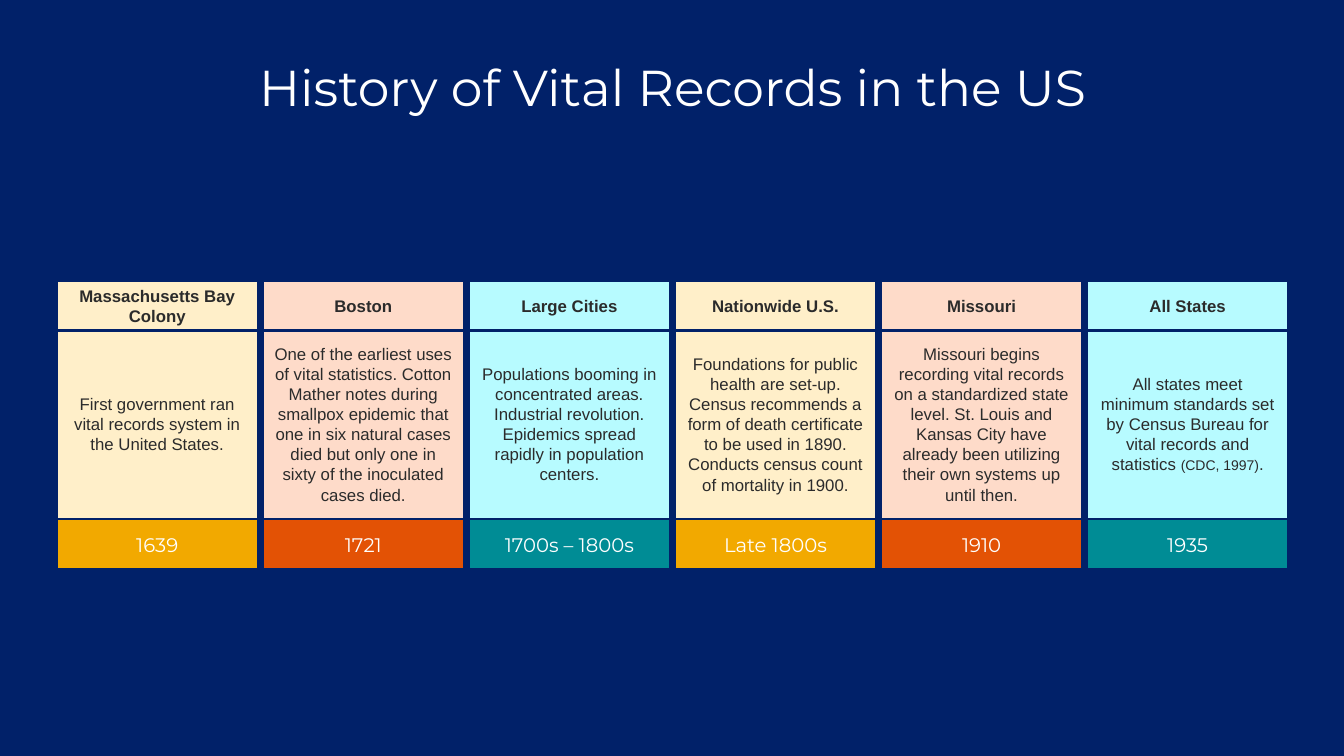
from pptx import Presentation
from pptx.dml.color import RGBColor
from pptx.enum.shapes import MSO_SHAPE
from pptx.enum.text import MSO_ANCHOR, PP_ALIGN
from pptx.util import Inches, Pt

NAVY, WHITE, CHARCOAL = "012169", "FFFFFF", "2B2B2B"
PALE = ["FFEFC9", "FEDBC9", "B7FBFF"]
STRONG = ["F2A900", "E35205", "008C95"]

FIRST_LEFT, LAST_LEFT, COLUMN_WIDTH = 0.56, 10.78, 2
ROWS = {"heading": (2.78, 0.5), "story": (3.26, 1.89), "year": (5.15, 0.5)}

FORMATS = {
    "title": {"name": "Montserrat", "size": Pt(36)},
    "heading": {"name": "Arial", "size": Pt(12), "bold": True},
    "story": {"name": "Arial", "size": Pt(12)},
    "citation": {"name": "Arial", "size": Pt(10)},
    "year": {"name": "Montserrat", "size": Pt(14)},
}

MILESTONES = [
    ("Massachusetts Bay Colony", "1639",
     [("First government ran vital records system in the United States.", "story")]),
    ("Boston", "1721",
     [("One of the earliest uses of vital statistics. Cotton Mather notes during "
       "smallpox epidemic that one in six natural cases died but only one in sixty "
       "of the inoculated cases died.", "story")]),
    ("Large Cities", "1700s – 1800s",
     [("Populations booming in concentrated areas. Industrial revolution. Epidemics "
       "spread rapidly in population centers.", "story")]),
    ("Nationwide U.S.", "Late 1800s",
     [("Foundations for public health are set-up. Census recommends a form of death "
       "certificate to be used in 1890. Conducts census count of mortality in 1900.",
       "story")]),
    ("Missouri", "1910",
     [("Missouri begins recording vital records on a standardized state level. "
       "St. Louis and Kansas City have already been utilizing their own systems up "
       "until then.", "story")]),
    ("All States", "1935",
     [("All states meet minimum standards set by Census Bureau for vital records and "
       "statistics ", "story"), ("(CDC, 1997)", "citation"), (".", "story")]),
]


def color(hex_value):
    return RGBColor.from_string(hex_value)


def write(frame, pieces, ink):
    frame.word_wrap = True
    frame.vertical_anchor = MSO_ANCHOR.MIDDLE
    paragraph = frame.paragraphs[0]
    paragraph.alignment = PP_ALIGN.CENTER
    for words, style in pieces:
        run = paragraph.add_run()
        run.text = words
        run.font.color.rgb = color(ink)
        for attribute, value in FORMATS[style].items():
            setattr(run.font, attribute, value)
    return paragraph


def add_title(slide, words):
    title = slide.shapes.add_textbox(
        Inches(0.92), Inches(0.41), Inches(11.5), Inches(0.97))
    write(title.text_frame, [(words, "title")], WHITE).line_spacing = 0.9


def add_cell(slide, column, row, pieces, fill, ink):
    pitch = (LAST_LEFT - FIRST_LEFT) / (len(MILESTONES) - 1)
    top, height = ROWS[row]
    cell = slide.shapes.add_shape(
        MSO_SHAPE.RECTANGLE, Inches(FIRST_LEFT + column * pitch), Inches(top),
        Inches(COLUMN_WIDTH), Inches(height))
    cell.shadow.inherit = False
    cell.fill.solid()
    cell.fill.fore_color.rgb = color(fill)
    cell.line.color.rgb = color(NAVY)
    cell.line.width = Pt(2)
    write(cell.text_frame, pieces, ink)


def main():
    deck = Presentation()
    deck.slide_width, deck.slide_height = Inches(13.33), Inches(7.5)
    slide = deck.slides.add_slide(deck.slide_layouts[6])
    slide.background.fill.solid()
    slide.background.fill.fore_color.rgb = color(NAVY)

    add_title(slide, "History of Vital Records in the US")
    for column, (place, year, story) in enumerate(MILESTONES):
        pale, strong = PALE[column % len(PALE)], STRONG[column % len(STRONG)]
        add_cell(slide, column, "story", story, pale, CHARCOAL)
        add_cell(slide, column, "year", [(year, "year")], strong, WHITE)
        add_cell(slide, column, "heading", [(place, "heading")], pale, CHARCOAL)
    deck.save("out.pptx")


if __name__ == "__main__":
    main()
